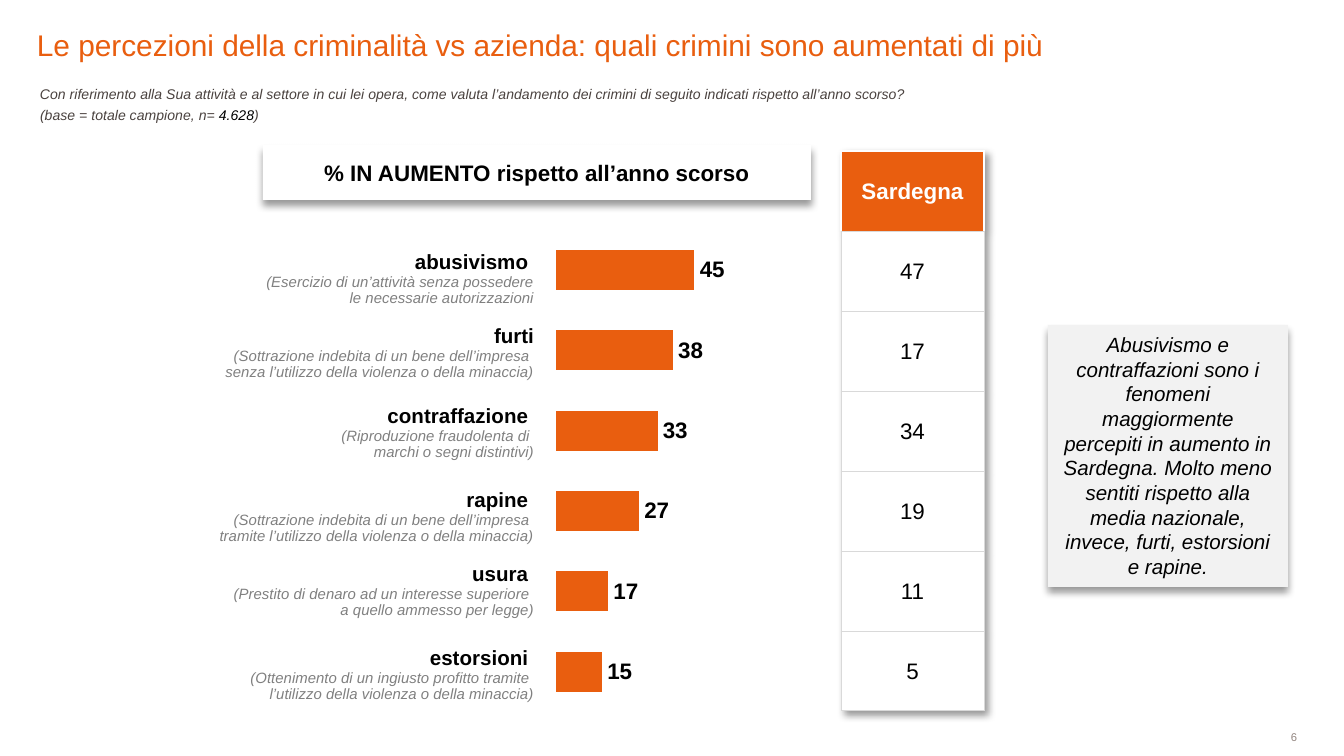
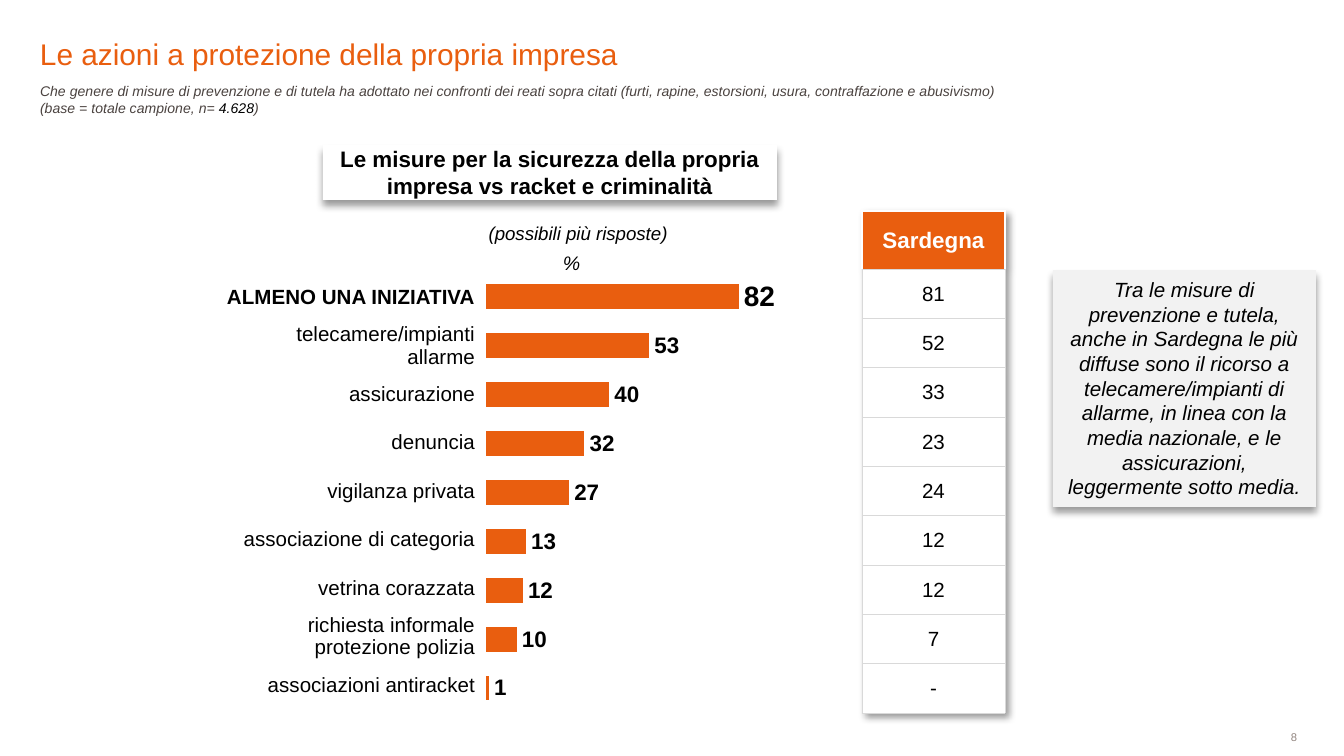
from lxml.etree import SubElement, Element
from pptx import Presentation
from pptx.chart.data import CategoryChartData
from pptx.dml.color import RGBColor
from pptx.enum.chart import XL_CHART_TYPE as ChartType, XL_LABEL_POSITION as LabelPosition
from pptx.enum.shapes import MSO_SHAPE as Shape
from pptx.enum.text import MSO_ANCHOR as Anchor, PP_ALIGN as Align
from pptx.oxml.ns import qn
from pptx.util import Emu, Pt

ORANGE, BLACK, WHITE = "E95E0F", "000000", "FFFFFF"
DARK, GREY, PAGE_GREY, RULE, PANEL = "4A423F", "808080", "928580", "D9D9D9", "F2F2F2"
FONT, CHART_FONT = "Arial", "Roboto"
SCALE = 914400 / 134.4
DEFAULT_INSETS = (13, 7, 13, 7)
NO_INSETS = (0, 0, 0, 0)
CELL_INSETS = (1, 1, 1, 0)

BASE = [("(base = totale campione, n= ", {}), ("4.628", {"color": BLACK}), (")", {})]
CRIMES = [
    ("abusivismo ", "(Esercizio di un’attività senza possedere", " le necessarie autorizzazioni", 45, "47", 74),
    ("furti", "(Sottrazione indebita di un bene dell’impresa ",
     "senza l’utilizzo della violenza o della minaccia)", 38, "17", 80),
    ("contraffazione ", "(Riproduzione fraudolenta di ", "marchi o segni distintivi)", 33, "34", 84),
    ("rapine ", "(Sottrazione indebita di un bene dell’impresa ",
     "tramite l’utilizzo della violenza o della minaccia)", 27, "19", 74),
    ("usura ", "(Prestito di denaro ad un interesse superiore ", "a quello ammesso per legge)", 17, "11", 84),
    ("estorsioni ", "(Ottenimento di un ingiusto profitto tramite ",
     "l’utilizzo della violenza o della minaccia)", 15, "5", 74),
]
MEASURES = [
    (["ALMENO UNA INIZIATIVA"], 82, "81"),
    (["telecamere/impianti", "allarme"], 53, "52"),
    (["assicurazione"], 40, "33"),
    (["denuncia"], 32, "23"),
    (["vigilanza privata"], 27, "24"),
    (["associazione di categoria"], 13, "12"),
    (["vetrina corazzata"], 12, "12"),
    (["richiesta informale", "protezione polizia"], 10, "7"),
    (["associazioni antiracket"], 1, "-"),
]
CRIMES_SLIDE = {
    "page": "6",
    "title": ("Le percezioni della criminalità vs azienda: quali crimini sono aumentati di più", (37, 12, 1048, 50)),
    "questions": [
        (["Con riferimento alla Sua attività e al settore in cui lei opera, come valuta l’andamento "
          "dei crimini di seguito indicati rispetto all’anno scorso?"], (27, 79, 995, 31)),
        ([BASE], (27, 100, 253, 31)),
    ],
    "heading": ("% IN AUMENTO rispetto all’anno scorso", (263, 145, 548, 55)),
    "chart": (383, 230, 617, 482),
    "region": {"box": (841, 151, 143, 560), "header": 80, "size": 12},
    "note": ("Abusivismo e contraffazioni sono i fenomeni maggiormente percepiti in aumento in Sardegna. "
             "Molto meno sentiti rispetto alla media nazionale, invece, furti, estorsioni e rapine.",
             (1048, 325, 240, 262)),
}
MEASURES_SLIDE = {
    "page": "8",
    "title": ("Le azioni a protezione della propria impresa", (40, 21, 1101, 50)),
    "questions": [
        (["Che genere di misure di prevenzione e di tutela ha adottato nei confronti dei reati sopra citati "
          "(furti, rapine, estorsioni, usura, contraffazione e abusivismo)", BASE], (27, 76, 993, 47)),
    ],
    "heading": ("Le misure per la sicurezza della propria impresa vs racket e criminalità", (323, 145, 454, 55)),
    "chart": (313, 272, 617, 441),
    "region": {"box": (862, 211, 143, 502), "header": 58, "size": 11},
    "note": ("Tra le misure di prevenzione e tutela, anche in Sardegna le più diffuse sono il ricorso a "
             "telecamere/impianti di allarme, in linea con la media nazionale, e le assicurazioni, "
             "leggermente sotto media.", (1053, 270, 263, 237)),
}


def px(length):
    return Emu(round(length * SCALE))


def place(box):
    return [px(length) for length in box]


def rgb(color):
    return RGBColor.from_string(color)


def write_text(frame, paragraphs, align=Align.LEFT, spacing=None, **style):
    for index, content in enumerate(paragraphs):
        paragraph = frame.paragraphs[0] if index == 0 else frame.add_paragraph()
        paragraph.alignment = align
        if spacing:
            paragraph.line_spacing = spacing
        runs = [(content, {})] if isinstance(content, str) else content
        for text, changes in runs:
            look = {"size": 11, "color": BLACK, "bold": False, "italic": False, **style, **changes}
            run = paragraph.add_run()
            run.text = text
            run.font.name = FONT
            run.font.size = Pt(look["size"])
            run.font.bold, run.font.italic = look["bold"], look["italic"]
            run.font.color.rgb = rgb(look["color"])


def set_insets(holder, insets):
    holder.margin_left, holder.margin_top, holder.margin_right, holder.margin_bottom = place(insets)


def add_text(slide, paragraphs, box, anchor=Anchor.TOP, insets=DEFAULT_INSETS, **style):
    frame = slide.shapes.add_textbox(*place(box)).text_frame
    frame.word_wrap = True
    frame.vertical_anchor = anchor
    set_insets(frame, insets)
    write_text(frame, paragraphs, **style)


def cast_shadow(effects, angle):
    shadow = SubElement(effects, qn("a:outerShdw"), blurRad=str(Pt(4)), dist=str(Pt(3)),
                        dir=str(angle * 60000), algn="t", rotWithShape="0")
    color = SubElement(shadow, qn("a:srgbClr"), val=BLACK)
    SubElement(color, qn("a:alpha"), val="40000")


def add_card(slide, text, box, fill, anchor=Anchor.TOP, **style):
    shape = slide.shapes.add_shape(Shape.RECTANGLE, *place(box))
    shape.fill.solid()
    shape.fill.fore_color.rgb = rgb(fill)
    shape.line.fill.background()
    shape.shadow.inherit = False
    cast_shadow(shape._element.spPr.find(qn("a:effectLst")), 90)
    frame = shape.text_frame
    frame.word_wrap = True
    frame.vertical_anchor = anchor
    set_insets(frame, DEFAULT_INSETS)
    write_text(frame, [text], align=Align.CENTER, **style)


def add_column(slide, box, heights):
    table = slide.shapes.add_table(len(heights), 1, *place(box)).table
    table.first_row = table.horz_banding = False
    for row, height in zip(table.rows, heights):
        row.height = px(height)
    return table


def set_borders(cell, sides, color, width):
    properties = cell._tc.get_or_add_tcPr()
    for side in sides:
        line = SubElement(properties, qn(f"a:ln{side}"), w=str(Pt(width)))
        SubElement(SubElement(line, qn("a:solidFill")), qn("a:srgbClr"), val=color)


def add_labels(slide, box, heights, labels, anchor, insets):
    table = add_column(slide, box, heights)
    for row, (paragraphs, style) in enumerate(labels):
        cell = table.cell(row, 0)
        cell.fill.background()
        cell.vertical_anchor = anchor
        set_insets(cell, insets)
        write_text(cell.text_frame, paragraphs, align=Align.RIGHT, spacing=0.97, **style)


def add_region(slide, values, box, header, size):
    row_height = (box[3] - header) / len(values)
    table = add_column(slide, box, [header] + [row_height] * len(values))
    effects = Element(qn("a:effectLst"))
    table._tbl.tblPr.insert(0, effects)
    cast_shadow(effects, 45)
    for row, text in enumerate(["Sardegna"] + values):
        cell = table.cell(row, 0)
        is_header = row == 0
        if is_header:
            set_borders(cell, "LRT", WHITE, 1)
            set_borders(cell, "B", RULE, 0.25)
        else:
            set_borders(cell, "LRTB", RULE, 0.25)
        cell.fill.solid()
        cell.fill.fore_color.rgb = rgb(ORANGE if is_header else WHITE)
        cell.vertical_anchor = Anchor.MIDDLE
        set_insets(cell, CELL_INSETS)
        write_text(cell.text_frame, [text], align=Align.CENTER, size=12 if is_header else size,
                   bold=is_header, color=WHITE if is_header else BLACK)


def format_label(font, size):
    font.name, font.size, font.bold = FONT, Pt(size), True
    font.color.rgb = rgb(BLACK)


def add_bars(slide, values, box):
    data = CategoryChartData(number_format="0")
    data.categories = [str(number + 1) for number in range(len(values))]
    data.add_series("Series 1", values)
    chart = slide.shapes.add_chart(ChartType.BAR_CLUSTERED, *place(box), data).chart
    chart.has_legend = chart.has_title = False
    chart.font.name, chart.font.size = CHART_FONT, Pt(13.5)
    chart.font.color.rgb = rgb(BLACK)
    chart.category_axis.reverse_order = True
    axis = chart.value_axis
    axis.minimum_scale, axis.maximum_scale, axis.major_unit = 0, 100, 10
    axis.has_major_gridlines = False
    chart.category_axis.visible = axis.visible = False
    plot = chart.plots[0]
    plot.gap_width = 100
    plot.vary_by_categories = False
    series = plot.series[0]
    series.format.fill.solid()
    series.format.fill.fore_color.rgb = rgb(ORANGE)
    labels = series.data_labels
    labels.show_value = True
    labels.number_format, labels.number_format_is_linked = "0", False
    labels.position = LabelPosition.OUTSIDE_END
    format_label(labels.font, 12)
    plot_area = chart._chartSpace.chart.plotArea
    for old in plot_area.findall(qn("c:layout")):
        plot_area.remove(old)
    layout = Element(qn("c:layout"))
    plot_area.insert(0, layout)
    manual = SubElement(layout, qn("c:manualLayout"))
    for tag, value in [("layoutTarget", "inner"), ("xMode", "edge"), ("yMode", "edge"),
                       ("x", "0.28"), ("y", "0"), ("w", "0.5"), ("h", "1")]:
        SubElement(manual, qn(f"c:{tag}"), val=value)
    return series


def add_slide(presentation, content, values, region_values):
    slide = presentation.slides.add_slide(presentation.slide_layouts[6])
    add_text(slide, [content["page"]], (1117, 731, 180, 12), Anchor.MIDDLE, NO_INSETS,
             align=Align.RIGHT, size=6, color=PAGE_GREY)
    title, title_box = content["title"]
    add_text(slide, [title], title_box, Anchor.BOTTOM, NO_INSETS, size=16, color=ORANGE)
    for paragraphs, box in content["questions"]:
        add_text(slide, paragraphs, box, size=7.5, color=DARK, italic=True)
    series = add_bars(slide, values, content["chart"])
    add_card(slide, *content["heading"], WHITE, Anchor.MIDDLE, size=12, bold=True)
    add_region(slide, region_values, **content["region"])
    add_card(slide, *content["note"], PANEL, italic=True)
    return slide, series


def add_crimes_slide(presentation):
    names, firsts, seconds, values, region_values, heights = zip(*CRIMES)
    slide, _ = add_slide(presentation, CRIMES_SLIDE, values, list(region_values))
    detail = {"size": 8, "color": GREY, "italic": True}
    labels = [([[(name, {"bold": True})], [(first, detail)], [(second, detail)]], {})
              for name, first, second in zip(names, firsts, seconds)]
    add_labels(slide, (86, 245, 461, sum(heights)), heights, labels, Anchor.TOP, DEFAULT_INSETS)


def add_measures_slide(presentation):
    names, values, region_values = zip(*MEASURES)
    slide, series = add_slide(presentation, MEASURES_SLIDE, values, list(region_values))
    total = series.points[0].data_label
    format_label(total.font, 15)
    total.position = LabelPosition.OUTSIDE_END
    labels = [(lines, {"bold": row == 0}) for row, lines in enumerate(names)]
    height = 436
    add_labels(slide, (207, 273, 269, height), [height / len(names)] * len(names), labels,
               Anchor.MIDDLE, CELL_INSETS)
    add_text(slide, ["(possibili più risposte)"], (390, 215, 376, 36), align=Align.CENTER, size=10, italic=True)
    add_text(slide, ["%"], (552, 251, 39, 24), Anchor.MIDDLE, NO_INSETS,
             align=Align.CENTER, size=10.5, italic=True)


def main():
    presentation = Presentation()
    presentation.slide_width, presentation.slide_height = px(1344), px(756)
    add_crimes_slide(presentation)
    add_measures_slide(presentation)
    presentation.save("out.pptx")


if __name__ == "__main__":
    main()
